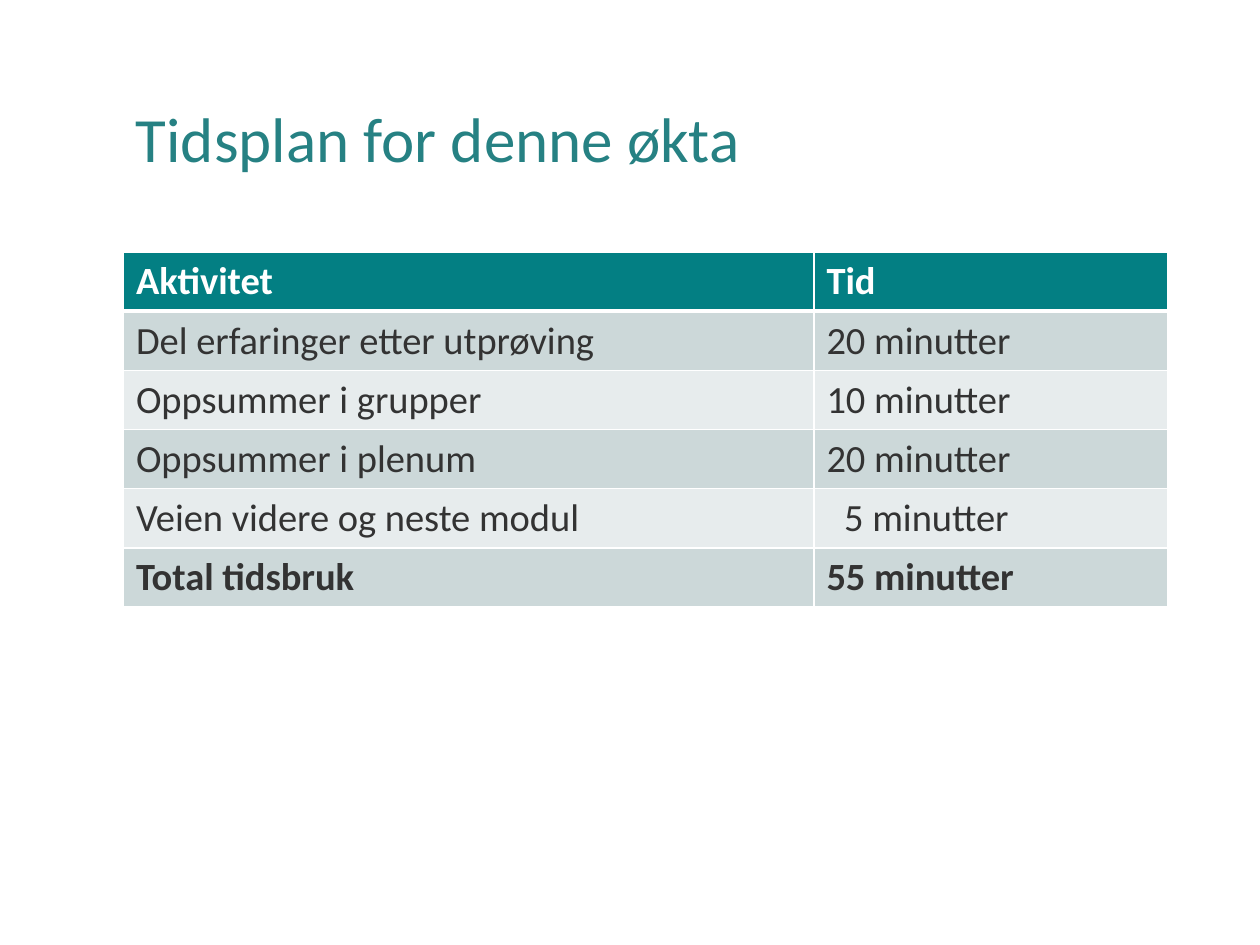
from lxml.etree import SubElement
from pptx import Presentation
from pptx.dml.color import RGBColor
from pptx.enum.text import MSO_ANCHOR as Anchor
from pptx.oxml.ns import qn
from pptx.util import Inches, Pt

COLORS = {
    "title": "268183",
    "header": "037F83",
    "odd": "CCD8D9",
    "even": "E7ECED",
    "text": "333333",
    "white": "FFFFFF",
}
FONT = "Calibri"
LEFT, WIDTH = 0.98, 8.29
COLUMN_WIDTHS = (5.48, 2.81)
ROW_HEIGHT = 0.47
DIGIT_INDENT = 0.14  # lines up the single-digit time

SCHEDULE = [
    ("Aktivitet", "Tid"),
    ("Del erfaringer etter utprøving", "20 minutter"),
    ("Oppsummer i grupper", "10 minutter"),
    ("Oppsummer i plenum", "20 minutter"),
    ("Veien videre og neste modul", "5 minutter"),
    ("Total tidsbruk", "55 minutter"),
]


def write_text(text_frame, text, size=22, color="text", bold=False, line_spacing=None):
    paragraph = text_frame.paragraphs[0]
    paragraph.line_spacing = line_spacing
    run = paragraph.add_run()
    run.text = text
    run.font.name = FONT
    run.font.size = Pt(size)
    run.font.bold = bold
    run.font.color.rgb = RGBColor.from_string(COLORS[color])


def set_borders(cell, **widths):
    """Draw white borders; they must precede the fill in the cell properties."""
    properties = cell._tc.get_or_add_tcPr()
    for side in ("L", "R", "T", "B"):
        line = SubElement(properties, qn(f"a:ln{side}"), w=str(Pt(widths.get(side, 1))))
        fill = SubElement(line, qn("a:solidFill"))
        SubElement(fill, qn("a:srgbClr"), val=COLORS["white"])


def add_title(slide, text):
    box = slide.shapes.add_textbox(Inches(LEFT), Inches(0.4), Inches(WIDTH), Inches(1.45))
    box.text_frame.word_wrap = True
    box.text_frame.vertical_anchor = Anchor.MIDDLE
    write_text(box.text_frame, text, size=36, color="title", line_spacing=0.9)


def add_schedule(slide, rows):
    table = slide.shapes.add_table(
        len(rows), len(COLUMN_WIDTHS), Inches(LEFT), Inches(2),
        Inches(WIDTH), Inches(ROW_HEIGHT * len(rows)),
    ).table
    for column, width in zip(table.columns, COLUMN_WIDTHS):
        column.width = Inches(width)

    for row_index, row in enumerate(rows):
        is_header = row_index == 0
        is_total = row_index == len(rows) - 1
        fill = "header" if is_header else "odd" if row_index % 2 else "even"
        for column_index, text in enumerate(row):
            cell = table.cell(row_index, column_index)
            # A thick rule separates the header from the body
            set_borders(cell, B=3 if is_header else 1, T=3 if row_index == 1 else 1)
            cell.fill.solid()
            cell.fill.fore_color.rgb = RGBColor.from_string(COLORS[fill])
            if text.startswith("5 "):
                cell.margin_left = Inches(0.1 + DIGIT_INDENT)
            write_text(cell.text_frame, text, color="white" if is_header else "text",
                       bold=is_header or is_total)


def main():
    presentation = Presentation()
    presentation.slide_width = Inches(10)
    presentation.slide_height = Inches(7.5)
    slide = presentation.slides.add_slide(presentation.slide_layouts[6])

    # Heading
    add_title(slide, "Tidsplan for denne økta")
    # Schedule table
    add_schedule(slide, SCHEDULE)

    presentation.save("out.pptx")


if __name__ == "__main__":
    main()
